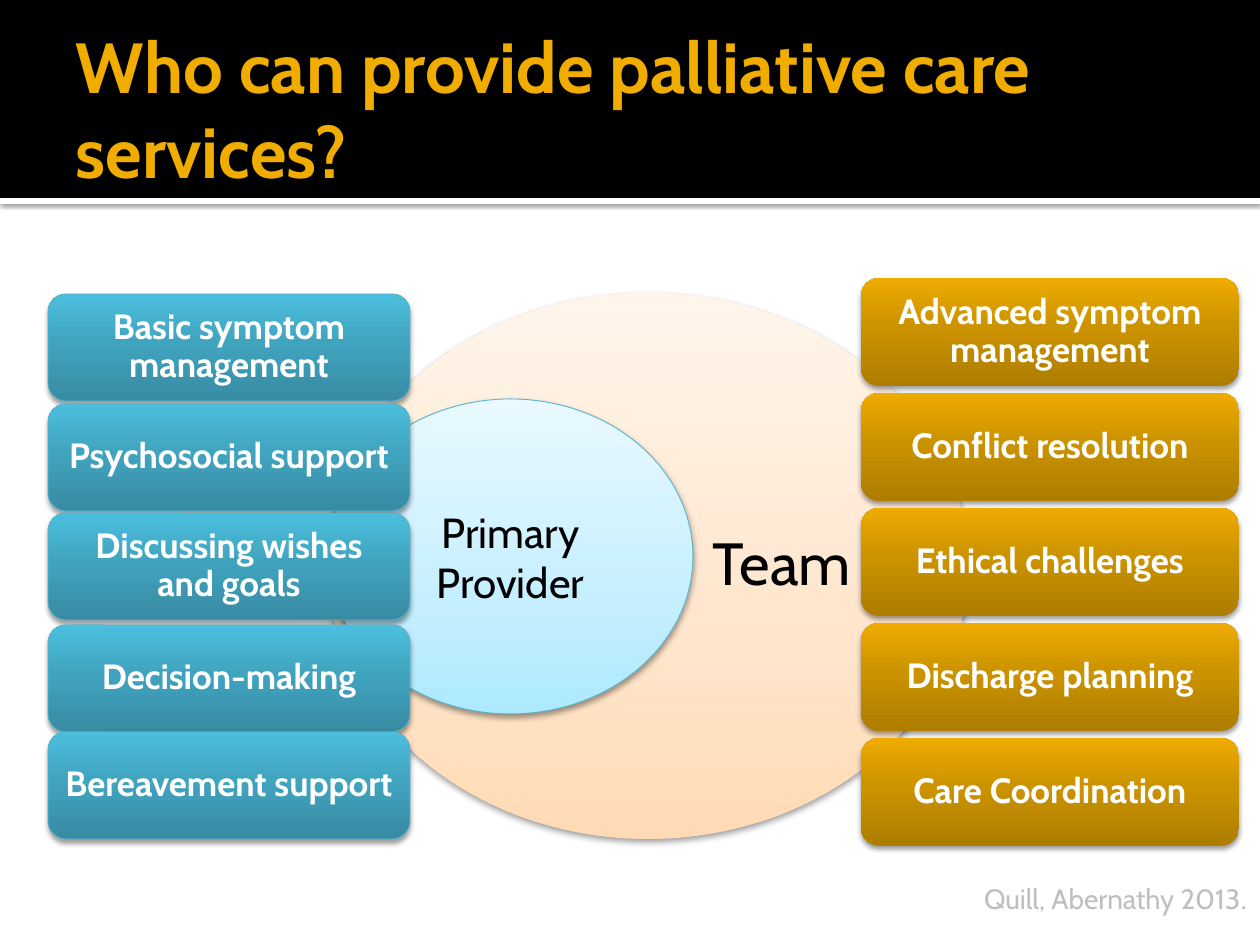
"""Build the slide that compares primary provider and team palliative care."""
from dataclasses import dataclass
from typing import Optional

import lxml.etree
import copy
import pptx
import pptx.dml.color
import pptx.enum.shapes
import pptx.enum.text
import pptx.oxml.ns
import pptx.util

PIXELS_PER_INCH = 126
FONT = "Cabin"
SHAPES = pptx.enum.shapes.MSO_SHAPE
ALIGN = pptx.enum.text.PP_ALIGN
ANCHOR = pptx.enum.text.MSO_ANCHOR


@dataclass(frozen=True)
class Box:
    left: int
    top: int
    width: int
    height: int


@dataclass(frozen=True)
class Shadow:
    blur: float
    distance: float
    opacity: int


@dataclass(frozen=True)
class Style:
    colors: tuple[str, ...]
    stops: tuple[float, ...] = (0, 0.35, 1)
    line: Optional[str] = None
    shadow: Optional[Shadow] = None


@dataclass(frozen=True)
class Run:
    text: str
    size: float
    color: str
    bold: bool = False


@dataclass(frozen=True)
class Column:
    left: int
    width: int
    height: int
    tops: tuple[int, ...]
    labels: tuple[str, ...]
    style: Style


CIRCLE_SHADOW = Shadow(3.5, 2, 38)
CARD_SHADOW = Shadow(3.1, 2, 38)
CARD_STOPS = (0, 0.55, 1)
TITLE_BAND = Style(("000000",))
TITLE_RULE = Style(("FFFFFF",), shadow=Shadow(2.5, 0.8, 60))
TEAM = Style(("FFDBB5", "FFE5CB", "FFF5EB"), shadow=CIRCLE_SHADOW)
PROVIDER = Style(("ADE9FF", "C5EFFF", "E9F9FF"), line="5BB3CA", shadow=CIRCLE_SHADOW)
TEAM_CARD = Style(("AE7D00", "CC9300", "EEAB00"), CARD_STOPS, shadow=CARD_SHADOW)
PROVIDER_CARD = Style(("378BA2", "41A4BF", "4BBFDE"), CARD_STOPS, "5BB3CA", CARD_SHADOW)

TEAM_COLUMN = Column(
    861, 378, 108, tuple(278 + 115 * row for row in range(5)),
    ("Advanced symptom management", "Conflict resolution", "Ethical challenges",
     "Discharge planning", "Care Coordination"), TEAM_CARD)
PROVIDER_COLUMN = Column(
    48, 362, 107, (294, 404, 513, 625, 732),
    ("Basic symptom management", "Psychosocial support",
     "Discussing wishes and goals", "Decision-making", "Bereavement support"),
    PROVIDER_CARD)


def px(value: float) -> int:
    return pptx.util.Inches(value / PIXELS_PER_INCH)


def rgb(color: str) -> pptx.dml.color.RGBColor:
    return pptx.dml.color.RGBColor.from_string(color)


def place(shape, box: Box) -> None:
    shape.left, shape.top = px(box.left), px(box.top)
    shape.width, shape.height = px(box.width), px(box.height)


def apply_fill(fill, style: Style) -> None:
    if len(style.colors) == 1:
        fill.solid()
        fill.fore_color.rgb = rgb(style.colors[0])
        return
    fill.gradient()
    fill.gradient_angle = 90
    stop_list = fill._fill._gradFill.gsLst
    stop_list.append(copy.deepcopy(stop_list[0]))
    for stop, color, position in zip(fill.gradient_stops, style.colors, style.stops):
        stop.color.rgb = rgb(color)
        stop.position = position


def apply_shadow(shape, shadow: Shadow) -> None:
    qn = pptx.oxml.ns.qn
    effects = shape.element.spPr.find(qn("a:effectLst"))
    outer = lxml.etree.SubElement(
        effects, qn("a:outerShdw"), blurRad=str(pptx.util.Pt(shadow.blur)),
        dist=str(pptx.util.Pt(shadow.distance)), dir="5400000", rotWithShape="0")
    color = lxml.etree.SubElement(outer, qn("a:srgbClr"), val="000000")
    lxml.etree.SubElement(color, qn("a:alpha"), val=str(shadow.opacity * 1000))


def add_shape(slide, kind, box: Box, style: Style):
    shape = slide.shapes.add_shape(kind, 0, 0, 0, 0)
    place(shape, box)
    apply_fill(shape.fill, style)
    if style.line:
        shape.line.color.rgb = rgb(style.line)
        shape.line.width = pptx.util.Pt(0.5)
    else:
        shape.line.fill.background()
    shape.shadow.inherit = False
    if style.shadow:
        apply_shadow(shape, style.shadow)
    return shape


def write(shape, runs: tuple[Run, ...], alignment=ALIGN.CENTER, anchor=ANCHOR.MIDDLE,
          margins: tuple[int, int, int, int] = (13, 6, 13, 6),
          spacing: float = 1.0) -> None:
    frame = shape.text_frame
    frame.word_wrap = True
    frame.auto_size = pptx.enum.text.MSO_AUTO_SIZE.NONE
    frame.vertical_anchor = anchor
    frame.margin_left, frame.margin_top, frame.margin_right, frame.margin_bottom = map(px, margins)
    paragraph = frame.paragraphs[0]
    paragraph.alignment = alignment
    paragraph.line_spacing = spacing
    for item in runs:
        run = paragraph.add_run()
        run.text = item.text
        run.font.name = FONT
        run.font.size = pptx.util.Pt(item.size)
        run.font.bold = item.bold
        run.font.color.rgb = rgb(item.color)


def add_text(slide, box: Box, runs: tuple[Run, ...], **options) -> None:
    shape = slide.shapes.add_textbox(0, 0, 0, 0)
    place(shape, box)
    write(shape, runs, **options)


def add_column(slide, column: Column) -> None:
    for top, label in zip(column.tops, column.labels):
        box = Box(column.left, top, column.width, column.height)
        card = add_shape(slide, SHAPES.ROUNDED_RECTANGLE, box, column.style)
        write(card, (Run(label, 20, "FFFFFF", True),), margins=(10, 10, 10, 10), spacing=0.9)


def add_title(slide) -> None:
    title = slide.shapes.title
    title.element.getparent().append(title.element)
    place(title, Box(63, 21, 1134, 173))
    write(title, (Run("Who can provide palliative care services?", 40.5, "F0AD00", True),),
          alignment=ALIGN.LEFT, margins=(13, 6, 6, 6))


def main() -> None:
    presentation = pptx.Presentation()
    presentation.slide_width, presentation.slide_height = px(1260), px(945)
    slide = presentation.slides.add_slide(presentation.slide_layouts[5])
    add_shape(slide, SHAPES.RECTANGLE, Box(0, 198, 1260, 6), TITLE_RULE)
    add_shape(slide, SHAPES.RECTANGLE, Box(0, 0, 1260, 198), TITLE_BAND)
    add_shape(slide, SHAPES.OVAL, Box(328, 293, 640, 546), TEAM)
    add_text(slide, Box(556, 373, 452, 386), (Run("Team", 34, "000000"),),
             margins=(3, 3, 3, 3), spacing=0.9)
    add_title(slide)
    provider = add_shape(slide, SHAPES.OVAL, Box(328, 399, 365, 315), PROVIDER)
    write(provider, (Run("Primary Provider", 24, "000000"),))
    add_column(slide, TEAM_COLUMN)
    add_text(slide, Box(126, 872, 1134, 50),
             (Run("Quill, Abernathy 2013", 16, "BFBFBF"), Run(".", 18, "BFBFBF")),
             alignment=ALIGN.RIGHT, anchor=ANCHOR.TOP)
    add_column(slide, PROVIDER_COLUMN)
    presentation.save("out.pptx")


if __name__ == "__main__":
    main()
